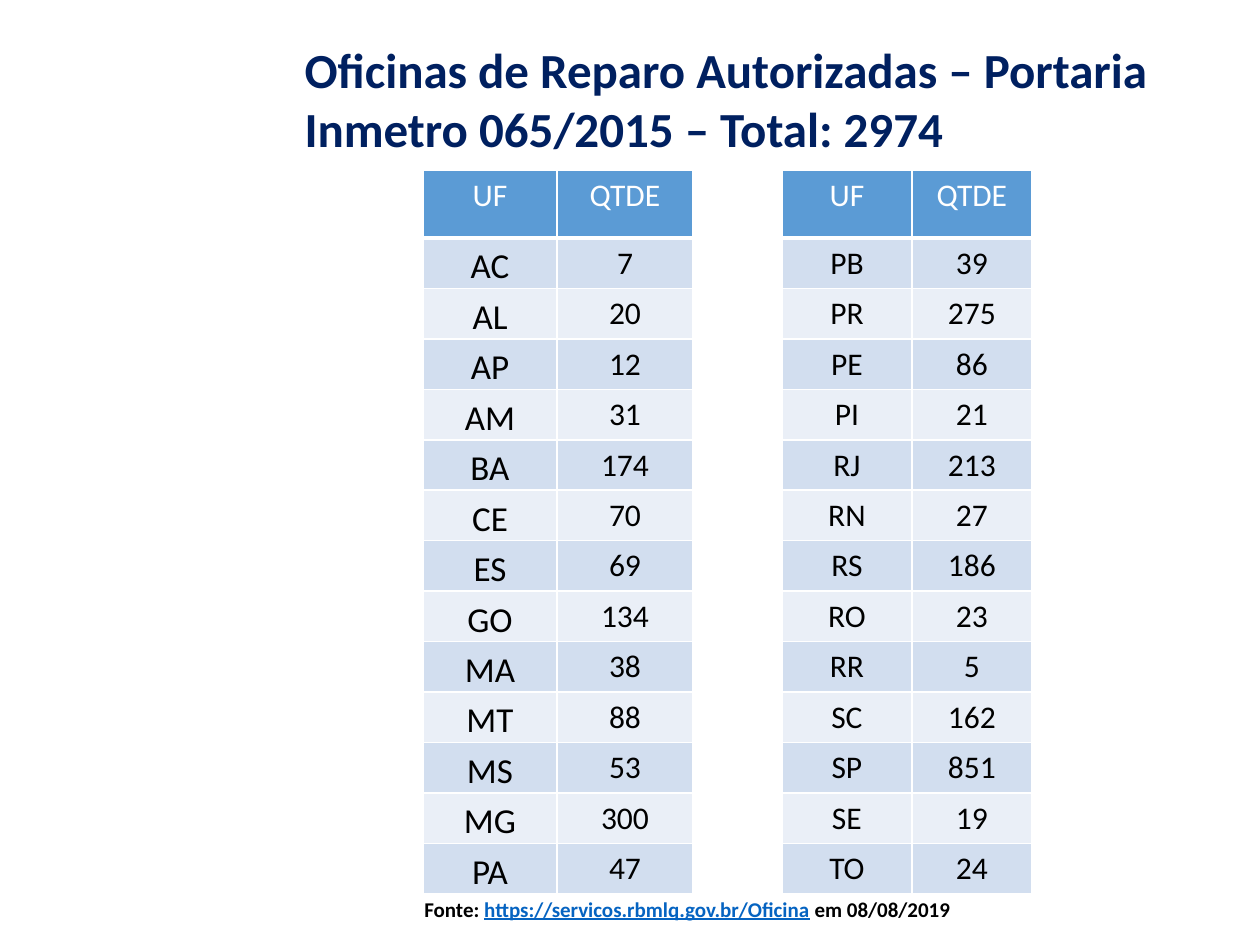
from lxml.etree import SubElement
from pptx import Presentation
from pptx.dml.color import RGBColor as RGB
from pptx.enum.text import MSO_ANCHOR as ANCHOR, MSO_AUTO_SIZE as AUTO, PP_ALIGN as ALIGN
from pptx.oxml.ns import qn
from pptx.util import Emu, Pt

COLORS = {"navy": "002060", "white": "FFFFFF", "black": "000000", "link": "0563C1",
          "header": "5B9BD5", "odd": "D2DEEF", "even": "EAEFF7"}
COLUMNS = (134, 136, 89, 130, 120)
LEFT = [("AC", 7), ("AL", 20), ("AP", 12), ("AM", 31), ("BA", 174), ("CE", 70), ("ES", 69),
        ("GO", 134), ("MA", 38), ("MT", 88), ("MS", 53), ("MG", 300), ("PA", 47)]
RIGHT = [("PB", 39), ("PR", 275), ("PE", 86), ("PI", 21), ("RJ", 213), ("RN", 27), ("RS", 186),
         ("RO", 23), ("RR", 5), ("SC", 162), ("SP", 851), ("SE", 19), ("TO", 24)]


def px(n):
    """Turn pixels into EMU."""
    return Emu(round(n * 914400 / 126))


def add_text(p, text, size=18, color="black", bold=False, underline=None, align=None):
    """Append a formatted run to a paragraph."""
    if align is not None:
        p.alignment = align
    r = p.add_run()
    r.text = text
    r.font.name, r.font.size = "Calibri", Pt(size)
    r.font.bold, r.font.underline = bold, underline
    r.font.color.rgb = RGB.from_string(COLORS[color])


def set_borders(cell, bottom):
    """Draw white borders around a cell, with the given bottom width in points."""
    tcPr = cell._tc.get_or_add_tcPr()
    widths = {"a:lnL": 1, "a:lnR": 1, "a:lnT": 1, "a:lnB": bottom}
    for tag, width in widths.items():
        ln = SubElement(tcPr, qn(tag), w=str(Pt(width)))
        SubElement(SubElement(ln, qn("a:solidFill")), qn("a:srgbClr"), val=COLORS["white"])


def add_title(s, x, y, w, h):
    """Place the slide title in its placeholder."""
    sp = s.shapes.title
    sp.left, sp.top, sp.width, sp.height = map(px, (x, y, w, h))
    tf = sp.text_frame
    tf.word_wrap, tf.auto_size, tf.vertical_anchor = True, AUTO.SHAPE_TO_FIT_TEXT, ANCHOR.TOP
    add_text(tf.paragraphs[0],
             "Oficinas de Reparo Autorizadas – Portaria Inmetro 065/2015 – Total: 2974",
             size=28, color="navy", bold=True, align=ALIGN.LEFT)


def add_states_table(s, x, y, w, h, header_h=68):
    """Place the two side-by-side state lists as one table with a blank middle column."""
    rows = [("UF", "QTDE", "", "UF", "QTDE")]
    rows += [(*a, "", *b) for a, b in zip(LEFT, RIGHT)]
    table = s.shapes.add_table(len(rows), len(COLUMNS), *map(px, (x, y, w, h))).table
    for column, width in zip(table.columns, COLUMNS):
        column.width = px(width)
    for i, values in enumerate(rows):
        header = i == 0
        table.rows[i].height = px(header_h if header else (h - header_h) / (len(rows) - 1))
        band = "header" if header else "odd" if i % 2 else "even"
        for j, value in enumerate(values):
            cell = table.cell(i, j)
            set_borders(cell, 3 if header else 1)
            cell.fill.solid()
            cell.fill.fore_color.rgb = RGB.from_string(COLORS["white" if value == "" else band])
            if value == "":
                continue
            first = j == 0 and not header
            if first:
                cell.vertical_anchor = ANCHOR.BOTTOM
                cell.margin_left = cell.margin_right = cell.margin_top = cell.margin_bottom = 0
            add_text(cell.text_frame.paragraphs[0], str(value), size=20 if first else 18,
                     color="white" if header else "black", align=ALIGN.CENTER)


def add_source(s, x, y, w, h):
    """Place the source line below the table."""
    tf = s.shapes.add_textbox(*map(px, (x, y, w, h))).text_frame
    tf.word_wrap, tf.auto_size = True, AUTO.SHAPE_TO_FIT_TEXT
    p = tf.paragraphs[0]
    add_text(p, "Fonte: ", size=12, bold=True)
    add_text(p, "https://servicos.rbmlq.gov.br/Oficina", size=12, color="link",
             bold=True, underline=True)
    add_text(p, " em 08/08/2019", size=12, bold=True)


def main():
    """Build and save the slide."""
    prs = Presentation()
    prs.slide_width, prs.slide_height = px(1260), px(945)
    s = prs.slides.add_slide(prs.slide_layouts[5])
    add_title(s, 292, 33, 872, 131)
    add_states_table(s, 423, 170, sum(COLUMNS), 723)
    add_source(s, 412, 890, 670, 38)
    prs.save("out.pptx")


if __name__ == "__main__":
    main()
